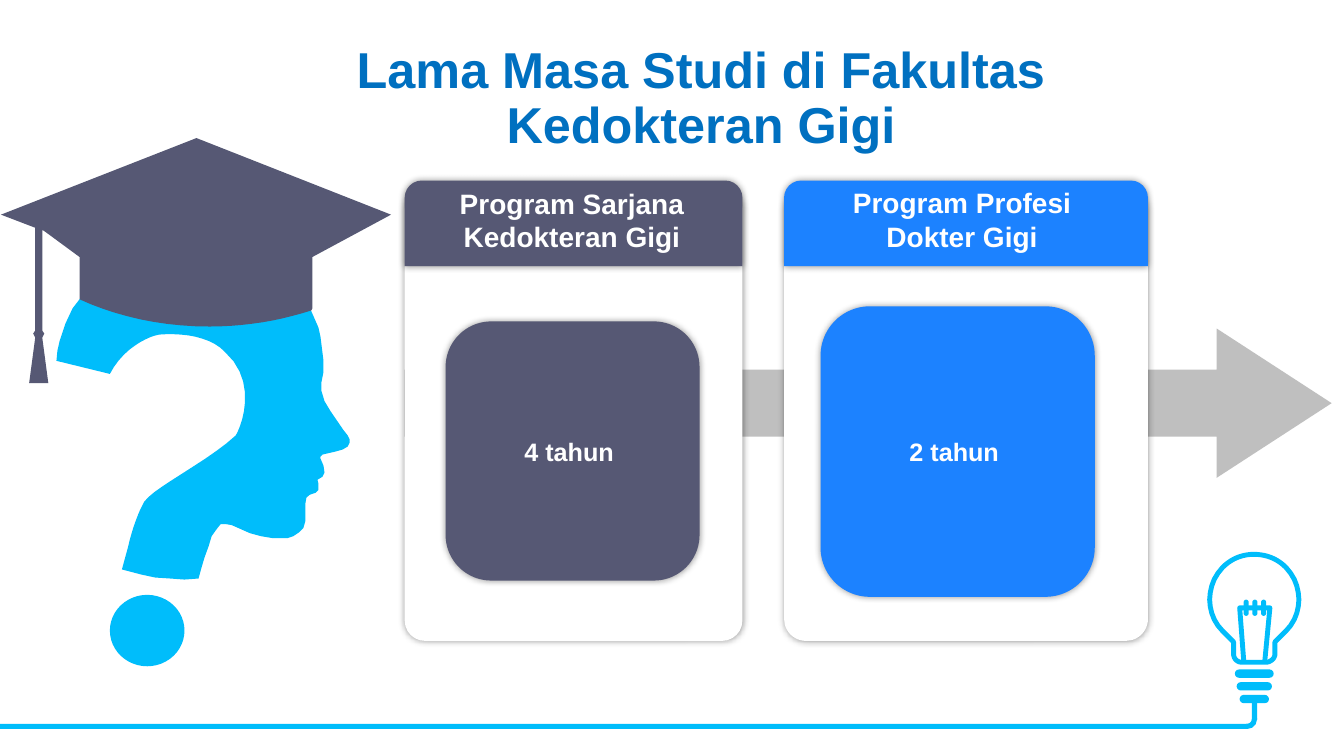
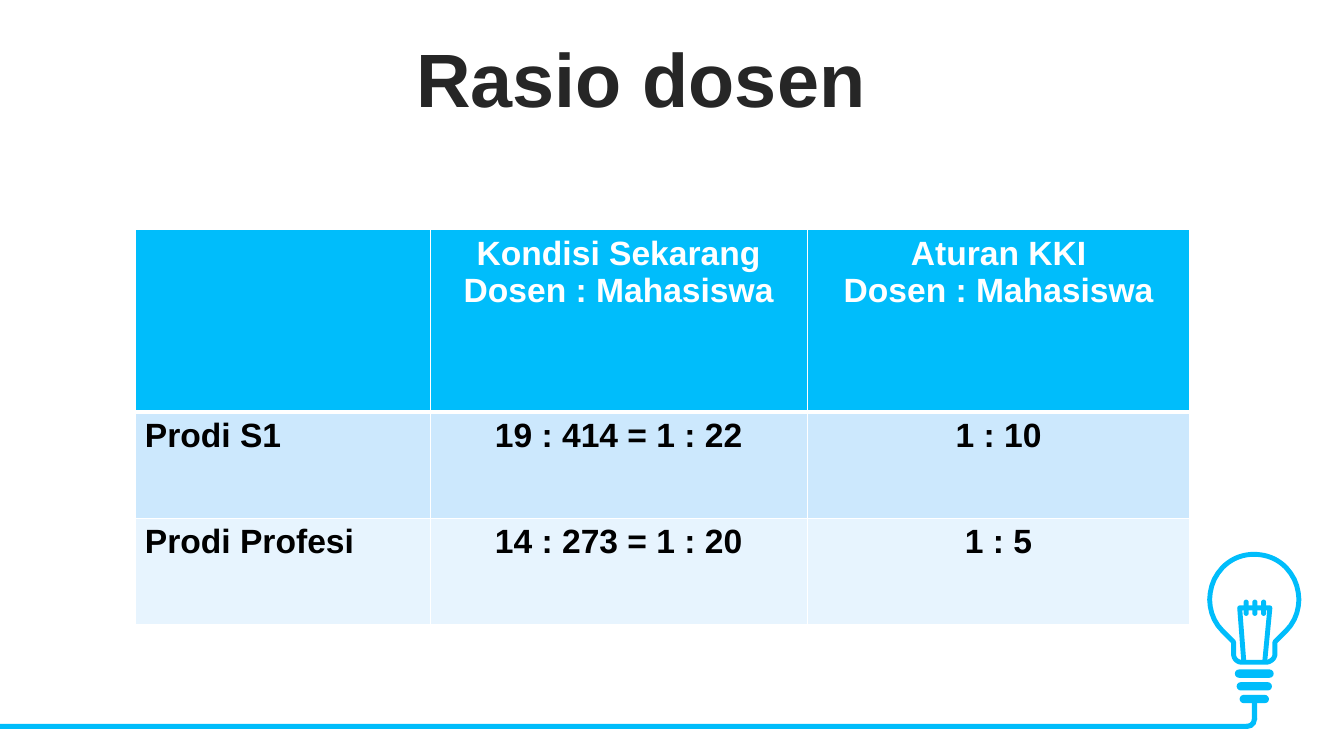
from lxml import etree
from pptx import Presentation
from pptx import util as u
from pptx.dml.color import RGBColor
from pptx.enum import shapes, text
from pptx.oxml import ns

Cm = u.Cm
KIND = shapes.MSO_SHAPE
COLORS = {
    "cyan": "00BDFB", "blue": "1C82FF", "slate": "565874", "title": "0070C0",
    "ink": "262626", "black": "000000", "white": "FFFFFF", "grey": "BFBFBF",
    "row_dark": "CCE8FD", "row_light": "E7F4FE",
}
FONT = "Arial"
GRID = Cm(2.54) / 100
FINE = 10

BULB = [
    (1244, 550), (1256, 550, 1267, 554, 1276, 563),
    (1293, 581, 1293, 609, 1276, 626), (1265, 637), (1265, 649),
    (1265, 653, 1261, 657, 1256, 657), (1232, 657),
    (1227, 657, 1224, 653, 1224, 649), (1224, 637), (1213, 626),
    (1196, 609, 1196, 581, 1213, 563), (1222, 554, 1233, 550, 1244, 550),
]
FILAMENT = [(1234, 655), (1230, 603), (1260, 603), (1255, 655)]
HEAD = [
    (215, 250), (226, 252), (254, 262), (271, 271), (285, 282), (298, 294),
    (309, 309), (316, 325), (318, 334), (321, 358), (321, 369), (319, 379),
    (319, 388), (322, 398), (328, 408), (341, 427), (345, 432), (347, 436),
    (347, 439), (345, 443), (340, 446), (333, 448), (320, 451), (318, 453),
    (318, 455), (321, 462), (322, 469), (320, 473), (315, 476), (316, 480),
    (316, 486), (313, 489), (307, 491), (304, 494), (303, 500), (303, 517),
    (301, 524), (297, 528), (291, 532), (285, 534), (271, 534), (259, 532),
    (248, 529), (239, 525), (230, 521), (224, 520), (219, 520), (215, 525),
    (210, 532), (207, 542), (203, 553), (200, 563), (197, 574), (183, 575),
    (169, 574), (154, 573), (140, 570), (121, 565), (127, 543),
    (131, 526, 136, 511, 143, 498), (152, 484, 206, 458, 234, 432),
    (239, 424, 257, 379, 223, 349), (209, 334, 181, 330, 158, 332),
    (146, 334, 122, 346, 109, 371), (56, 358), (57, 348), (59, 339),
    (62, 330), (65, 321), (72, 306), (82, 293), (95, 279), (110, 268),
    (127, 259), (146, 253), (167, 249), (190, 248), (202, 249),
]
CAP = [
    (195, 137), (1, 213), (35, 226), (35, 328), (33, 331), (35, 335),
    (29, 380), (48, 380), (42, 335), (44, 331), (42, 328), (42, 228),
    (45, 230), (79, 255), (79, 297), (116, 314, 160, 324, 208, 324),
    (244, 324, 278, 318, 309, 308), (310, 306), (310, 255), (388, 213),
]


def flatten(outline, steps=10):
    points = [outline[0]]
    for node in outline[1:]:
        if len(node) == 2:
            points.append(node)
            continue
        start = points[-1]
        for i in range(1, steps + 1):
            t = i / steps
            weights = ((1 - t) ** 3, 3 * t * (1 - t) ** 2, 3 * t * t * (1 - t), t ** 3)
            points.append(tuple(
                sum(w * v for w, v in zip(weights, (start[a], *node[a::2])))
                for a in (0, 1)))
    return [(x * FINE, y * FINE) for x, y in points]


def color(name):
    return RGBColor.from_string(COLORS[name])


def child(parent, tag, **attrs):
    return etree.SubElement(parent, ns.qn(tag), **attrs)


class Deck:
    def __init__(self):
        self.prs = Presentation()
        self.prs.slide_width, self.prs.slide_height = Cm(33.87), Cm(19.05)
        self.s = None

    def new_slide(self, title, box, size, ink):
        self.s = self.prs.slides.add_slide(self.prs.slide_layouts[5])
        sp = self.s.shapes.title
        sp.left, sp.top, sp.width, sp.height = map(Cm, box)
        self.frame_text(sp, title, size, ink)
        p = sp.text_frame.paragraphs[0]
        p.line_spacing, p.space_before = 0.9, u.Pt(10)
        self.lamp()

    def style(self, sp, fill=None, line=None, width=3.5):
        sp.shadow.inherit = False
        if fill:
            sp.fill.solid()
            sp.fill.fore_color.rgb = color(fill)
        else:
            sp.fill.background()
        if line:
            sp.line.color.rgb = color(line)
            sp.line.width = u.Pt(width)
        else:
            sp.line.fill.background()
        return sp

    def shape(self, kind, box, fill, adj=(), shadow=False):
        sp = self.s.shapes.add_shape(kind, *map(Cm, box))
        for i, value in enumerate(adj):
            sp.adjustments[i] = value
        self.style(sp, fill)
        if shadow:
            effects = sp._element.spPr.find(ns.qn("a:effectLst"))
            glow = child(effects, "a:outerShdw", blurRad=str(u.Pt(5)), dist="0",
                         algn="ctr", rotWithShape="0")
            child(child(glow, "a:srgbClr", val=COLORS["black"]), "a:alpha", val="40000")
        return sp

    def outline(self, nodes, fill=None, line=None, close=True):
        points = flatten(nodes)
        builder = self.s.shapes.build_freeform(*points[0], scale=GRID / FINE)
        builder.add_line_segments(points[1:], close=close)
        return self.style(builder.convert_to_shape(), fill, line)

    def set_text(self, tf, words, size, ink, align=text.PP_ALIGN.CENTER):
        tf.text = words
        for p in tf.paragraphs:
            p.alignment = align
            for r in p.runs:
                r.font.name, r.font.size, r.font.bold = FONT, u.Pt(size), True
                r.font.color.rgb = color(ink)

    def frame_text(self, sp, words, size, ink, anchor=text.MSO_ANCHOR.MIDDLE):
        tf = sp.text_frame
        self.set_text(tf, words, size, ink)
        tf.word_wrap, tf.auto_size = True, text.MSO_AUTO_SIZE.NONE
        tf.vertical_anchor = anchor

    def label(self, words, box, size, ink):
        sp = self.s.shapes.add_textbox(*map(Cm, box))
        self.frame_text(sp, words, size, ink, text.MSO_ANCHOR.TOP)

    def lamp(self):
        self.outline(BULB, "white", "cyan")
        self.outline(FILAMENT, line="cyan", close=False)
        for i in range(3):
            self.shape(KIND.ROUNDED_RECTANGLE, (31.34 + 0.22 * i, 15.11, 0.13, 0.41),
                       "cyan", [0.5])
        for i, width in enumerate((0.98, 0.89, 0.74)):
            self.shape(KIND.ROUNDED_RECTANGLE,
                       (31.61 - width / 2, 16.87 + 0.32 * i, width, 0.21), "cyan", [0.5])
        self.shape(KIND.RECTANGLE, (0, 18.24, 31.42, 0.13), "cyan")
        self.shape(KIND.RECTANGLE, (31.55, 17.7, 0.13, 0.44), "cyan")
        self.shape(KIND.BLOCK_ARC, (31.19, 17.88, 0.49, 0.49), "cyan",
                   [213.39, 60.92, 0.27])

    def card(self, heading, heading_at, years, left, width, badge, fill):
        self.shape(KIND.ROUNDED_RECTANGLE, (left, 4.75, width, 11.4), "white",
                   [0.06], shadow=True)
        self.shape(KIND.ROUND_2_SAME_RECTANGLE, (left, 4.55, width, 2.16), fill,
                   [0.2, 0], shadow=True)
        sp = self.shape(KIND.ROUNDED_RECTANGLE, badge, fill, [0.18], shadow=True)
        self.frame_text(sp, years, 18, "white")
        self.label(heading, (*heading_at, 7.65, 1.96), 20, "white")

    def border(self, cell, bottom):
        tc_pr = cell._tc.get_or_add_tcPr()
        for side, width in (("L", 1), ("R", 1), ("T", 1), ("B", bottom)):
            ln = child(tc_pr, "a:ln" + side, w=str(u.Pt(width)))
            child(child(ln, "a:solidFill"), "a:srgbClr", val=COLORS["white"])

    def table(self, rows, left, top, widths, heights, fills):
        frame = self.s.shapes.add_table(len(rows), len(widths), Cm(left), Cm(top),
                                        Cm(sum(widths)), Cm(sum(heights)))
        table = frame.table
        for column, width in zip(table.columns, widths):
            column.width = Cm(width)
        for i, row in enumerate(rows):
            table.rows[i].height = Cm(heights[i])
            for j, words in enumerate(row):
                cell = table.cell(i, j)
                self.border(cell, 1 if i else 3)
                cell.fill.solid()
                cell.fill.fore_color.rgb = color(fills[i])
                align = text.PP_ALIGN.CENTER if j else text.PP_ALIGN.LEFT
                self.set_text(cell.text_frame, words, 24, "black" if i else "white", align)


def study_length(deck):
    deck.new_slide("Lama Masa Studi di Fakultas Kedokteran Gigi",
                   (6.86, 0.86, 21.62, 3.3), 36, "title")
    deck.shape(KIND.RIGHT_ARROW, (10.19, 8.28, 23.37, 3.76), "grey", [0.45, 0.77])
    deck.card("Program Sarjana Kedokteran Gigi", (10.59, 4.57), "4 tahun ",
              10.2, 8.51, (11.23, 8.1, 6.4, 6.53), "slate")
    deck.card("Program Profesi Dokter Gigi", (20.42, 4.55), "2 tahun ",
              19.76, 9.17, (20.68, 7.72, 6.91, 7.32), "blue")
    deck.outline(HEAD, "cyan")
    deck.shape(KIND.OVAL, (2.77, 14.99, 1.88, 1.8), "cyan")
    deck.outline(CAP, "slate")


def lecturer_ratio(deck):
    deck.new_slide("Rasio dosen ", (9.19, 1.09, 14.45, 2.01), 54, "ink")
    deck.table([
        ("", "Kondisi Sekarang\nDosen : Mahasiswa", "Aturan KKI\nDosen : Mahasiswa"),
        ("Prodi S1", "19 : 414 = 1 : 22", "1 : 10"),
        ("Prodi Profesi", "14 : 273 = 1 : 20", "1 : 5"),
    ], 3.4, 5.79, (7.44, 9.5, 9.65), (4.6, 2.67, 2.67), ("cyan", "row_dark", "row_light"))


def main():
    deck = Deck()
    study_length(deck)
    lecturer_ratio(deck)
    deck.prs.save("out.pptx")


if __name__ == "__main__":
    main()
